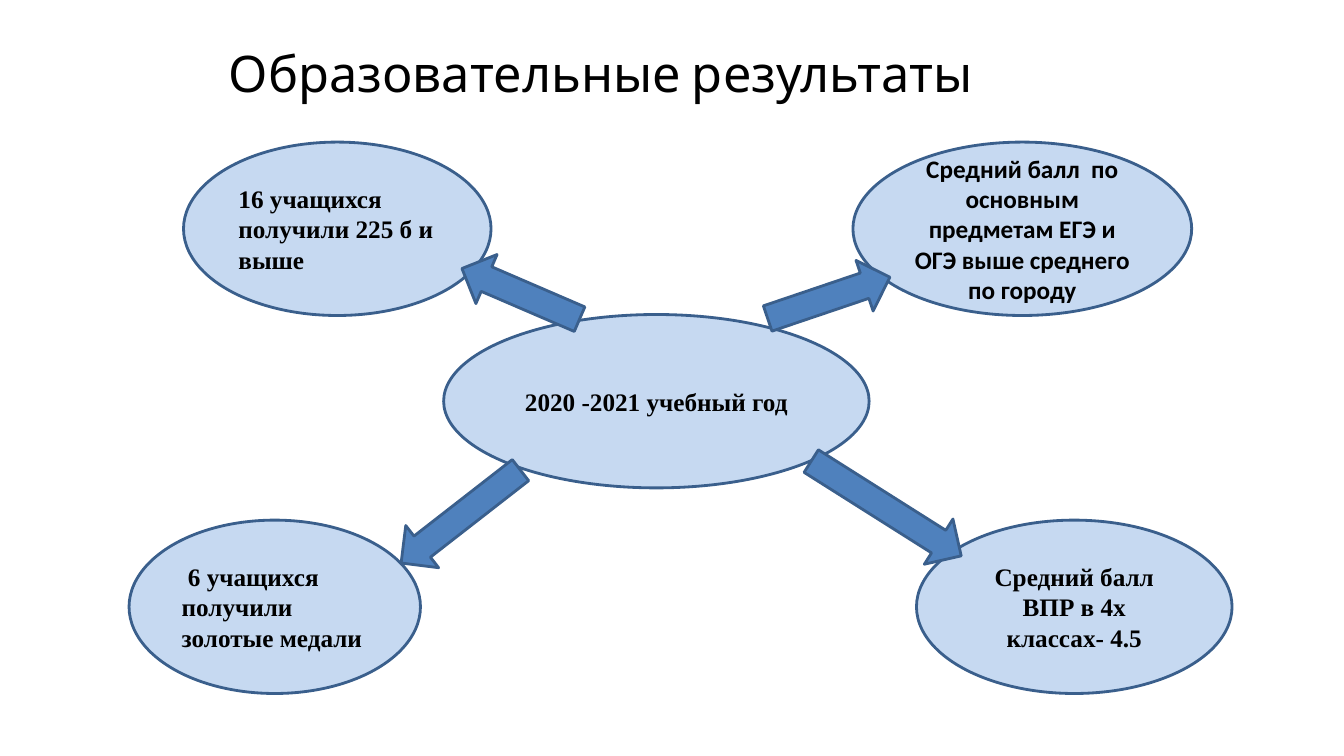
from pptx import Presentation
from pptx.dml.color import RGBColor
from pptx.enum.shapes import MSO_SHAPE
from pptx.enum.text import MSO_ANCHOR, MSO_AUTO_SIZE, PP_ALIGN
from pptx.util import Pt

ELLIPSE, ARROW = MSO_SHAPE.OVAL, MSO_SHAPE.RIGHT_ARROW
LEFT, CENTER = PP_ALIGN.LEFT, PP_ALIGN.CENTER
PX = 9144
SERIF, SANS = "Times New Roman", "Calibri"
OVAL_HEIGHT, ARROW_HEIGHT = 172, 53
TOP_ROW, MIDDLE_ROW, BOTTOM_ROW = 141, 312, 516


def color(value):
    return RGBColor.from_string(value)


def add_figure(kind, left, top, width, height, fill):
    shape = slide.shapes.add_shape(kind, left * PX, top * PX, width * PX, height * PX)
    shape.shadow.inherit = False
    shape.fill.solid()
    shape.fill.fore_color.rgb = color(fill)
    shape.line.color.rgb = color("3A5F8C")
    shape.line.width = Pt(2)
    return shape


presentation = Presentation()
presentation.slide_width = 1333 * PX
presentation.slide_height = 750 * PX
slide = presentation.slides.add_slide(presentation.slide_layouts[5])

title = slide.shapes.title
title.left, title.top, title.width, title.height = 73 * PX, 42 * PX, 1130 * PX, 63 * PX
frame = title.text_frame
frame.text = "Образовательные результаты"
frame.auto_size = MSO_AUTO_SIZE.NONE
frame.vertical_anchor = MSO_ANCHOR.TOP
frame.margin_left = 154 * PX
frame.margin_top = frame.margin_right = frame.margin_bottom = 0
paragraph = frame.paragraphs[0]
paragraph.alignment = LEFT
paragraph.font.name = "Cabin"
paragraph.font.size = Pt(36)
paragraph.font.color.rgb = color("000000")

ovals = [
    (440, MIDDLE_ROW, 422, "2020 -2021 учебный год", SERIF, CENTER),
    (846, TOP_ROW, 336, "Средний балл  по основным предметам ЕГЭ и ОГЭ выше среднего по городу", SANS, CENTER),
    (182, TOP_ROW, 305, "16 учащихся получили 225 б и выше", SERIF, LEFT),
    (909, BOTTOM_ROW, 313, "Средний балл ВПР в 4х классах- 4.5", SERIF, CENTER),
    (128, BOTTOM_ROW, 289, " 6 учащихся получили золотые медали", SERIF, LEFT),
]
for left, top, width, text, font_name, alignment in ovals:
    oval = add_figure(ELLIPSE, left, top, width, OVAL_HEIGHT, "C6D9F1")
    frame = oval.text_frame
    frame.text = text
    frame.word_wrap = True
    frame.vertical_anchor = MSO_ANCHOR.MIDDLE
    paragraph = frame.paragraphs[0]
    paragraph.alignment = alignment
    paragraph.font.name = font_name
    paragraph.font.size = Pt(18)
    paragraph.font.bold = True
    paragraph.font.color.rgb = color("000000")

arrows = [
    (758, 269, 128, 341.3),
    (382, 486, 150, 142.1),
    (791, 478, 176, 32.3),
    (453, 265, 127, 203.3),
]
for left, top, width, rotation in arrows:
    arrow = add_figure(ARROW, left, top, width, ARROW_HEIGHT, "4F81BD")
    arrow.rotation = rotation

presentation.save("out.pptx")
